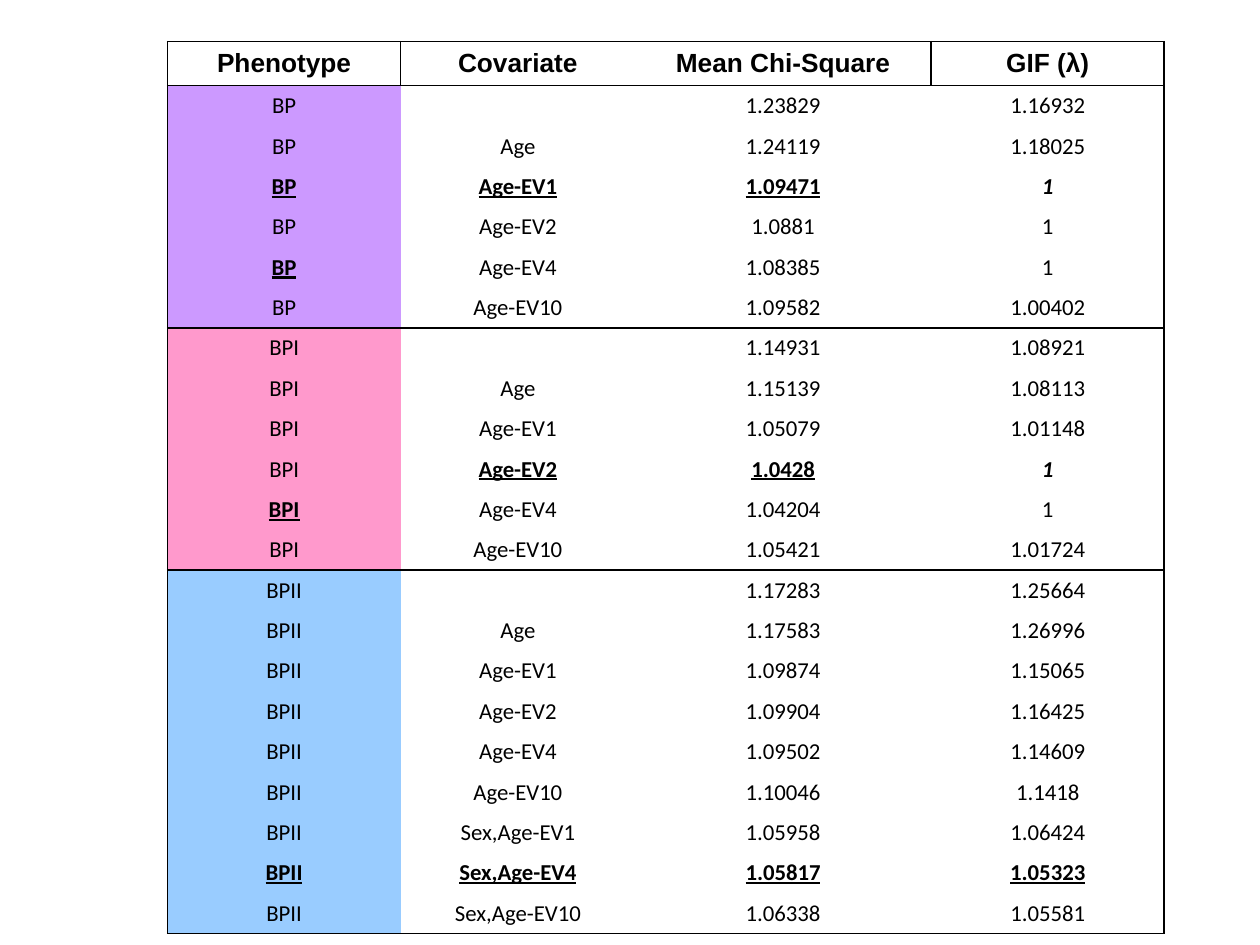
from lxml.etree import SubElement
from pptx import Presentation
from pptx.dml.color import RGBColor
from pptx.enum.text import MSO_ANCHOR, PP_ALIGN
from pptx.oxml.ns import qn
from pptx.util import Inches, Pt

BLACK = RGBColor(0x00, 0x00, 0x00)
PURPLE = RGBColor(0xCC, 0x99, 0xFF)
PINK = RGBColor(0xFF, 0x99, 0xCC)
BLUE = RGBColor(0x99, 0xCC, 0xFF)
NO_STYLE = "{2D5ABB26-0587-4C30-8999-92F81FD0307C}"

# Content: a leading * marks bold underlined text, a leading / bold italic text
HEADERS = ["Phenotype", "Covariate", "Mean Chi-Square", "GIF (λ)"]
GROUPS = [
    (PURPLE, [
        ("BP", "", "1.23829", "1.16932"),
        ("BP", "Age", "1.24119", "1.18025"),
        ("*BP", "*Age-EV1", "*1.09471", "/1"),
        ("BP", "Age-EV2", "1.0881", "1"),
        ("*BP", "Age-EV4", "1.08385", "1"),
        ("BP", "Age-EV10", "1.09582", "1.00402"),
    ]),
    (PINK, [
        ("BPI", "", "1.14931", "1.08921"),
        ("BPI", "Age", "1.15139", "1.08113"),
        ("BPI", "Age-EV1", "1.05079", "1.01148"),
        ("BPI", "*Age-EV2", "*1.0428", "/1"),
        ("*BPI", "Age-EV4", "1.04204", "1"),
        ("BPI", "Age-EV10", "1.05421", "1.01724"),
    ]),
    (BLUE, [
        ("BPII", "", "1.17283", "1.25664"),
        ("BPII", "Age", "1.17583", "1.26996"),
        ("BPII", "Age-EV1", "1.09874", "1.15065"),
        ("BPII", "Age-EV2", "1.09904", "1.16425"),
        ("BPII", "Age-EV4", "1.09502", "1.14609"),
        ("BPII", "Age-EV10", "1.10046", "1.1418"),
        ("BPII", "Sex,Age-EV1", "1.05958", "1.06424"),
        ("*BPII", "*Sex,Age-EV4", "*1.05817", "*1.05323"),
        ("BPII", "Sex,Age-EV10", "1.06338", "1.05581"),
    ]),
]
HEADER_BORDERS = ["LRTB", "LTB", "RTB", "LRTB"]
COLUMN_WIDTHS = [1.85, 1.86, 2.35, 1.85]
HEADER_HEIGHT, ROW_HEIGHT = 0.35, 0.32
LAST_COLUMN = len(HEADERS) - 1


def set_borders(cell, sides):
    properties = cell._tc.get_or_add_tcPr()
    for side in "LRTB":
        line = SubElement(properties, qn(f"a:ln{side}"), w=str(Pt(1)))
        if side in sides:
            fill = SubElement(line, qn("a:solidFill"))
            SubElement(fill, qn("a:srgbClr"), val=str(BLACK))
        else:
            SubElement(line, qn("a:noFill"))


def fill_cell(cell, text, font_name, size, borders, color=None, bold=False):
    set_borders(cell, borders)
    if color is None:
        cell.fill.background()
    else:
        cell.fill.solid()
        cell.fill.fore_color.rgb = color
    cell.vertical_anchor = MSO_ANCHOR.MIDDLE
    paragraph = cell.text_frame.paragraphs[0]
    paragraph.text = text.lstrip("*/")
    paragraph.alignment = PP_ALIGN.CENTER
    indent = Inches(0.38)
    paragraph_properties = paragraph._p.get_or_add_pPr()
    paragraph_properties.set("marL", str(indent))
    paragraph_properties.set("indent", str(-indent))
    font = paragraph.font
    font.name, font.size = font_name, Pt(size)
    font.color.rgb = BLACK
    font.bold = bold or text.startswith(("*", "/"))
    font.underline = text.startswith("*")
    font.italic = text.startswith("/")
    if not text:  # keeps an empty cell from stretching its row
        SubElement(paragraph._p, qn("a:endParaRPr"), sz=str(size * 100))


def main():
    presentation = Presentation()
    presentation.slide_width, presentation.slide_height = Inches(10), Inches(7.5)
    slide = presentation.slides.add_slide(presentation.slide_layouts[6])

    # Table grid
    row_count = 1 + sum(len(rows) for _, rows in GROUPS)
    height = HEADER_HEIGHT + ROW_HEIGHT * (row_count - 1)
    frame = slide.shapes.add_table(
        row_count, len(HEADERS), Inches(1.33), Inches(0.33),
        Inches(sum(COLUMN_WIDTHS)), Inches(height))
    table = frame.table
    table.first_row = table.horz_banding = False
    table._tbl.tblPr.find(qn("a:tableStyleId")).text = NO_STYLE
    for column, width in zip(table.columns, COLUMN_WIDTHS):
        column.width = Inches(width)
    for index, row in enumerate(table.rows):
        row.height = Inches(ROW_HEIGHT if index else HEADER_HEIGHT)

    # Header row
    for column, (text, borders) in enumerate(zip(HEADERS, HEADER_BORDERS)):
        fill_cell(table.cell(0, column), text, "Arial", 15, borders, bold=True)

    # Phenotype groups, each framed by a line above and below
    row_index = 1
    for color, rows in GROUPS:
        for position, values in enumerate(rows):
            row_borders = "T" if position == 0 else ""
            row_borders += "B" if position == len(rows) - 1 else ""
            for column, text in enumerate(values):
                borders = row_borders + {0: "L", LAST_COLUMN: "R"}.get(column, "")
                fill_cell(table.cell(row_index, column), text, "Calibri", 13,
                          borders, color if column == 0 else None)
            row_index += 1

    presentation.save("out.pptx")


if __name__ == "__main__":
    main()
